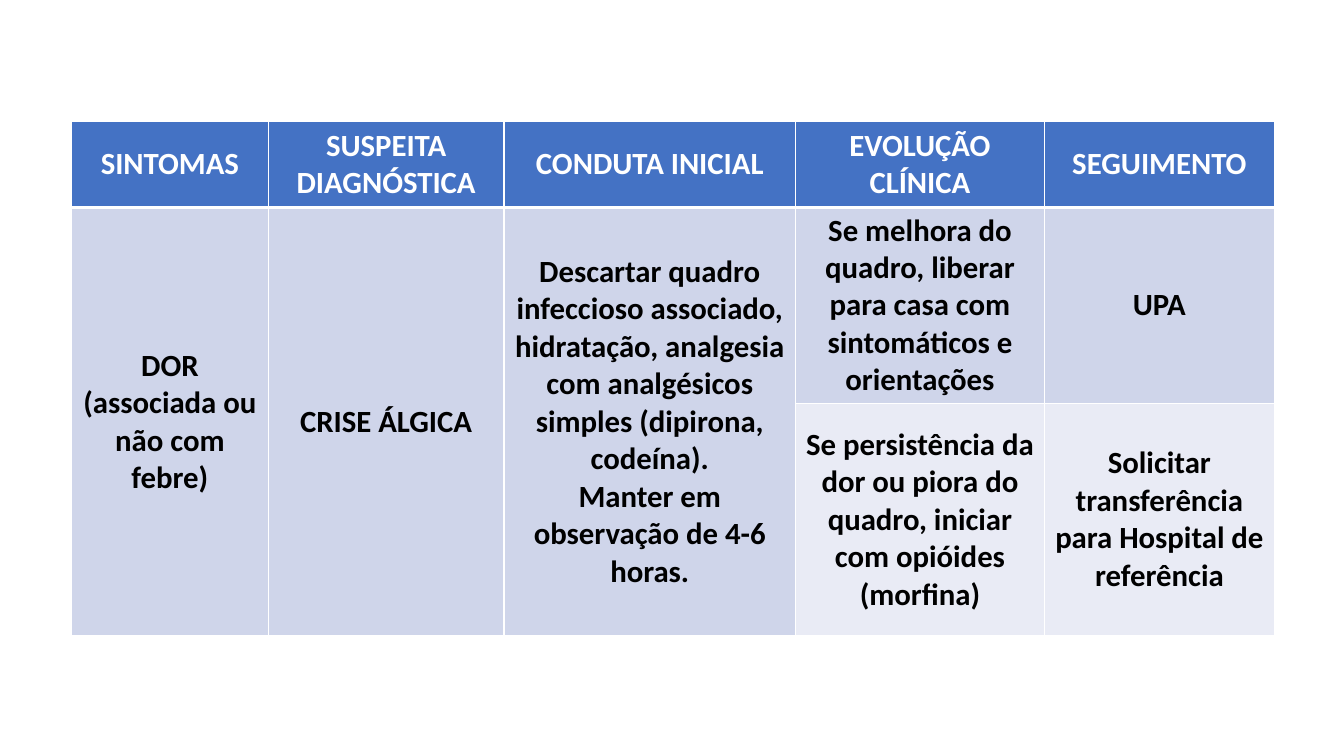
"""Build a slide with the clinical pathway table for pain."""
from dataclasses import dataclass

from lxml.etree import SubElement
from pptx import Presentation
from pptx.dml.color import RGBColor
from pptx.enum.text import MSO_ANCHOR, PP_ALIGN
from pptx.oxml.ns import qn
from pptx.table import Table, _Cell
from pptx.util import Inches, Pt


@dataclass(frozen=True)
class Theme:
    """Colours, type and line widths of the slide."""
    font: str = "Calibri"
    size: int = 22
    header: str = "4472C4"
    first_band: str = "CFD5EA"
    second_band: str = "E9EBF5"
    light: str = "FFFFFF"
    dark: str = "000000"
    thin: float = 1
    thick: float = 3


@dataclass(frozen=True)
class Entry:
    """Text of one table cell and the rows it spans."""
    paragraphs: tuple[str, ...]
    rows: int = 1


@dataclass(frozen=True)
class Stage:
    """One column of the pathway, read from top to bottom."""
    title: str
    width: float
    entries: tuple[Entry, ...]


THEME = Theme()
ROW_HEIGHTS = (0.86, 1.94, 2.31)
BAND_FILLS = (THEME.header, THEME.first_band, THEME.second_band)
STAGES = (
    Stage("SINTOMAS", 1.95, (Entry(("DOR (associada ou não com febre)",), 2),)),
    Stage("SUSPEITA DIAGNÓSTICA", 2.34, (Entry(("CRISE ÁLGICA",), 2),)),
    Stage("CONDUTA INICIAL", 2.89, (
        Entry((
            "Descartar quadro infeccioso associado, hidratação, analgesia "
            "com analgésicos simples (dipirona, codeína).",
            "Manter em observação de 4-6 horas.",
        ), 2),
    )),
    Stage("EVOLUÇÃO CLÍNICA", 2.47, (
        Entry(("Se melhora do quadro, liberar para casa com sintomáticos e orientações",)),
        Entry(("Se persistência da dor ou piora do quadro, iniciar com opióides (morfina)",)),
    )),
    Stage("SEGUIMENTO", 2.28, (
        Entry(("UPA",)),
        Entry(("Solicitar transferência para Hospital de referência",)),
    )),
)


def style_cell(cell: _Cell, row: int) -> None:
    """Set the borders, fill, margins and anchor of a cell."""
    properties = cell._tc.get_or_add_tcPr()
    widths = {
        "a:lnL": THEME.thin,
        "a:lnR": THEME.thin,
        "a:lnT": THEME.thick if row == 1 else THEME.thin,
        "a:lnB": THEME.thick if row == 0 else THEME.thin,
    }
    for side, width in widths.items():
        border = SubElement(properties, qn(side), w=str(Pt(width)))
        colour = SubElement(border, qn("a:solidFill"))
        SubElement(colour, qn("a:srgbClr"), val=THEME.light)
    cell.fill.solid()
    cell.fill.fore_color.rgb = RGBColor.from_string(BAND_FILLS[row])
    cell.margin_left = cell.margin_right = Inches(0.04)
    cell.margin_top = cell.margin_bottom = Inches(0.04)
    cell.vertical_anchor = MSO_ANCHOR.MIDDLE


def write_entry(cell: _Cell, entry: Entry, colour: str) -> None:
    """Write the centred bold paragraphs of an entry."""
    frame = cell.text_frame
    for index, wording in enumerate(entry.paragraphs):
        paragraph = frame.add_paragraph() if index else frame.paragraphs[0]
        paragraph.alignment = PP_ALIGN.CENTER
        run = paragraph.add_run()
        run.text = wording
        run.font.name = THEME.font
        run.font.size = Pt(THEME.size)
        run.font.bold = True
        run.font.color.rgb = RGBColor.from_string(colour)


def fill_stage(pathway: Table, column: int, stage: Stage) -> None:
    """Fill one column with its title and entries."""
    pathway.columns[column].width = Inches(stage.width)
    for row in range(len(ROW_HEIGHTS)):
        style_cell(pathway.cell(row, column), row)
    row = 0
    for entry in (Entry((stage.title,)), *stage.entries):
        cell = pathway.cell(row, column)
        if entry.rows > 1:
            cell.merge(pathway.cell(row + entry.rows - 1, column))
        write_entry(cell, entry, THEME.dark if row else THEME.light)
        row += entry.rows


def main() -> None:
    """Create and save the presentation."""
    presentation = Presentation()
    presentation.slide_width = Inches(13.33)
    presentation.slide_height = Inches(7.5)
    slide = presentation.slides.add_slide(presentation.slide_layouts[6])
    pathway = slide.shapes.add_table(
        len(ROW_HEIGHTS), len(STAGES), Inches(0.71), Inches(1.2),
        Inches(sum(stage.width for stage in STAGES)), Inches(sum(ROW_HEIGHTS)),
    ).table
    for row, height in zip(pathway.rows, ROW_HEIGHTS):
        row.height = Inches(height)
    for column, stage in enumerate(STAGES):
        fill_stage(pathway, column, stage)
    presentation.save("out.pptx")


if __name__ == "__main__":
    main()
